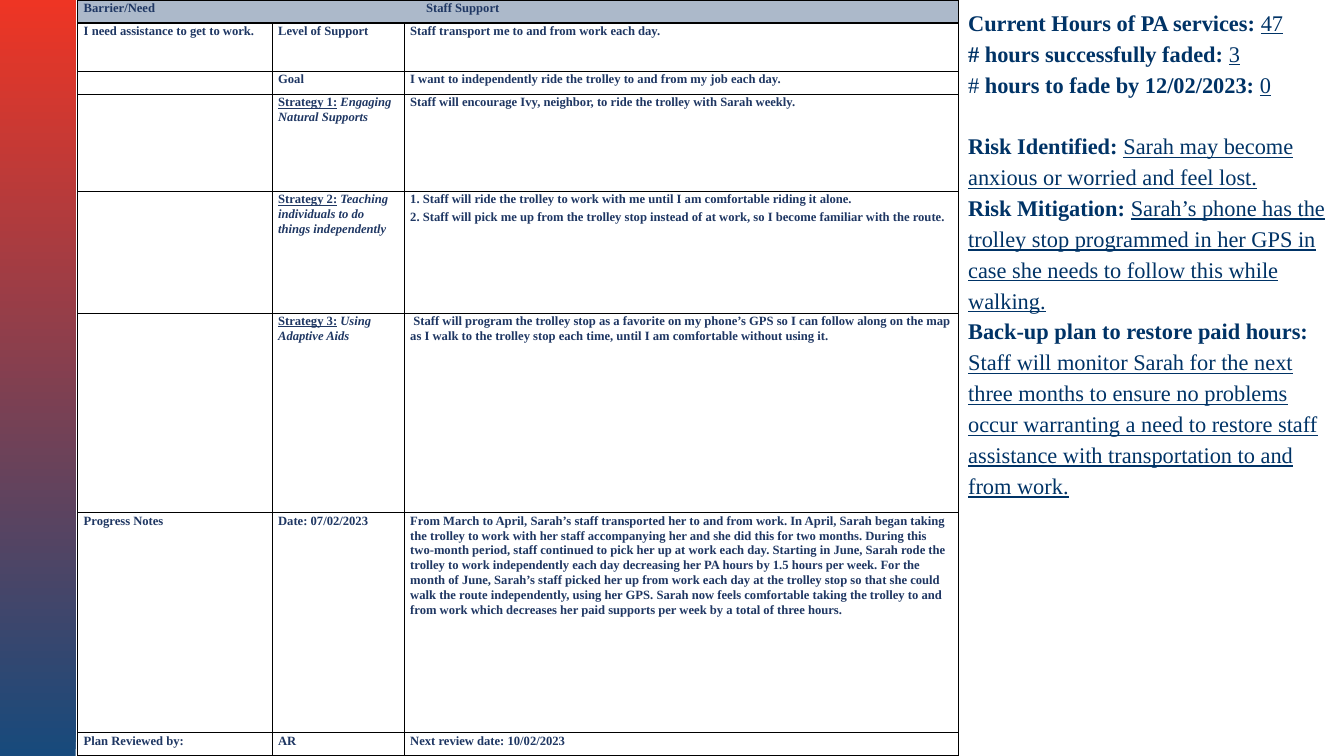
from lxml import etree
from pptx import Presentation, util as u
from pptx.dml.color import RGBColor
from pptx.enum import shapes, text
from pptx.oxml.ns import qn

FONT = "Times New Roman"
NAVY, INK = "003366", "1F3763"
COLS = [4.9, 3.33, 13.97]
ROWS = [0.58, 1.22, 0.58, 2.44, 3.07, 5.03, 5.54, 0.58]


def plan(num, name):
    """Return the runs that label a strategy."""
    return [(f"Strategy {num}:", "bu"), (" ", "b"), (name, "bi")]


CELLS = [
    ["Barrier/Need\tStaff Support", "", ""],
    ["I need assistance to get to work.", "Level of Support",
     "Staff transport me to and from work each day."],
    ["", "Goal", "I want to independently ride the trolley to and from my job each day."],
    ["", plan(1, "Engaging Natural Supports"),
     "Staff will encourage Ivy, neighbor, to ride the trolley with Sarah weekly."],
    ["", plan(2, "Teaching individuals to do things independently"),
     "1. Staff will ride the trolley to work with me until I am comfortable riding it alone.\n"
     "2. Staff will pick me up from the trolley stop instead of at work, "
     "so I become familiar with the route."],
    ["", plan(3, "Using Adaptive Aids"),
     " Staff will program the trolley stop as a favorite on my phone’s GPS so I can follow "
     "along on the map as I walk to the trolley stop each time, until I am comfortable "
     "without using it."],
    ["Progress Notes", "Date: 07/02/2023",
     "From March to April, Sarah’s staff transported her to and from work. In April, Sarah "
     "began taking the trolley to work with her staff accompanying her and she did this for "
     "two months. During this two-month period, staff continued to pick her up at work each "
     "day. Starting in June, Sarah rode the trolley to work independently each day decreasing "
     "her PA hours by 1.5 hours per week. For the month of June, Sarah’s staff picked her up "
     "from work each day at the trolley stop so that she could walk the route independently, "
     "using her GPS. Sarah now feels comfortable taking the trolley to and from work which "
     "decreases her paid supports per week by a total of three hours."],
    ["Plan Reviewed by:", "AR", "Next review date: 10/02/2023"],
]

NOTES = [
    [("Current Hours of PA services: ", "b"), ("47", "u")],
    [("# hours successfully faded: ", "b"), ("3", "u")],
    [("# ", ""), ("hours to fade by 12/02/2023: ", "b"), ("0", "u")],
    [("Risk Identified: ", "b"),
     ("Sarah may become anxious or worried and feel lost.", "u")],
    [("Risk Mitigation: ", "b"),
     ("Sarah’s phone has the trolley stop programmed in her GPS in case she needs "
      "to follow this while walking.", "u")],
    [("Back-up plan to restore paid hours: ", "b"),
     ("Staff will monitor Sarah for the next three months to ensure no problems occur "
      "warranting a need to restore staff assistance with transportation to and from work.",
      "u")],
]


def tint(code):
    """Turn a hex string into a colour."""
    return RGBColor.from_string(code)


def write(frame, paras, size=9, color=INK, lead=1.07, gaps=None, tab=None):
    """Fill a text frame with paragraphs of (text, style) runs."""
    for num, runs in enumerate(paras):
        para = frame.add_paragraph() if num else frame.paragraphs[0]
        para.line_spacing = lead
        if gaps and num in gaps:
            para.space_before = u.Pt(gaps[num])
        if tab:
            stops = etree.SubElement(para._p.get_or_add_pPr(), qn("a:tabLst"))
            etree.SubElement(stops, qn("a:tab"), pos=str(u.Cm(tab)), algn="l")
        for words, style in runs:
            run = para.add_run()
            run.text = words
            font = run.font
            font.name, font.size = FONT, u.Pt(size)
            font.color.rgb = tint(color)
            font.bold, font.italic = "b" in style, "i" in style
            font.underline = "u" in style
        if not runs:
            etree.SubElement(para._p, qn("a:endParaRPr"), sz=str(size * 100))


def frame_cell(cell, fill):
    """Give a cell thin black borders, its margins and its fill."""
    props = cell._tc.get_or_add_tcPr()
    for side in "LRTB":
        line = etree.SubElement(props, qn(f"a:ln{side}"), w=str(u.Pt(1)))
        paint = etree.SubElement(line, qn("a:solidFill"))
        etree.SubElement(paint, qn("a:srgbClr"), val="000000")
    cell.margin_left = cell.margin_right = u.Cm(0.15)
    cell.margin_top = cell.margin_bottom = 0
    if fill:
        cell.fill.solid()
        cell.fill.fore_color.rgb = tint(fill)
    else:
        cell.fill.background()


def add_band(slide, left, top, wide, high):
    """Draw the shaded band on the left edge."""
    band = slide.shapes.add_shape(
        shapes.MSO_SHAPE.RECTANGLE, *map(u.Cm, (left, top, wide, high)))
    band.shadow.inherit = False
    band.line.fill.background()
    band.fill.gradient()
    band.fill.gradient_angle = 90
    for stop, code in zip(band.fill.gradient_stops, ("174A7C", "EE3524")):
        stop.color.rgb = tint(code)


def add_plan(slide, left, top, wide, high):
    """Build the support plan table."""
    grid = slide.shapes.add_table(
        len(ROWS), len(COLS), *map(u.Cm, (left, top, wide, high))).table
    grid.first_row = grid.horz_banding = False
    for col, size in zip(grid.columns, COLS):
        col.width = u.Cm(size * wide / sum(COLS))
    for row, size in zip(grid.rows, ROWS):
        row.height = u.Cm(size * high / sum(ROWS))
    for r, line in enumerate(CELLS):
        for c, item in enumerate(line):
            cell = grid.cell(r, c)
            frame_cell(cell, None if r else "ACB9CA")
            if isinstance(item, str):
                paras = [[(part, "b")] if part else [] for part in item.split("\n")]
            else:
                paras = [item]
            write(cell.text_frame, paras, gaps={1: 2}, tab=None if r else 8.63)
    grid.cell(0, 0).merge(grid.cell(0, len(COLS) - 1))


def add_notes(slide, left, top, wide, high):
    """Place the hours and risk notes beside the table."""
    frame = slide.shapes.add_textbox(*map(u.Cm, (left, top, wide, high))).text_frame
    frame.word_wrap = True
    frame.vertical_anchor = text.MSO_ANCHOR.TOP
    write(frame, NOTES, size=16, color=NAVY, lead=1.15, gaps={3: 22})


def main():
    """Build and save the slide."""
    deck = Presentation()
    deck.slide_width, deck.slide_height = u.Cm(33.87), u.Cm(19.05)
    slide = deck.slides.add_slide(deck.slide_layouts[6])
    add_band(slide, 0, 0, 1.91, 19.05)
    add_notes(slide, 24.15, 0, 9.72, 12.78)
    add_plan(slide, 1.96, 0, 22.2, 19.05)
    deck.save("out.pptx")


if __name__ == "__main__":
    main()
